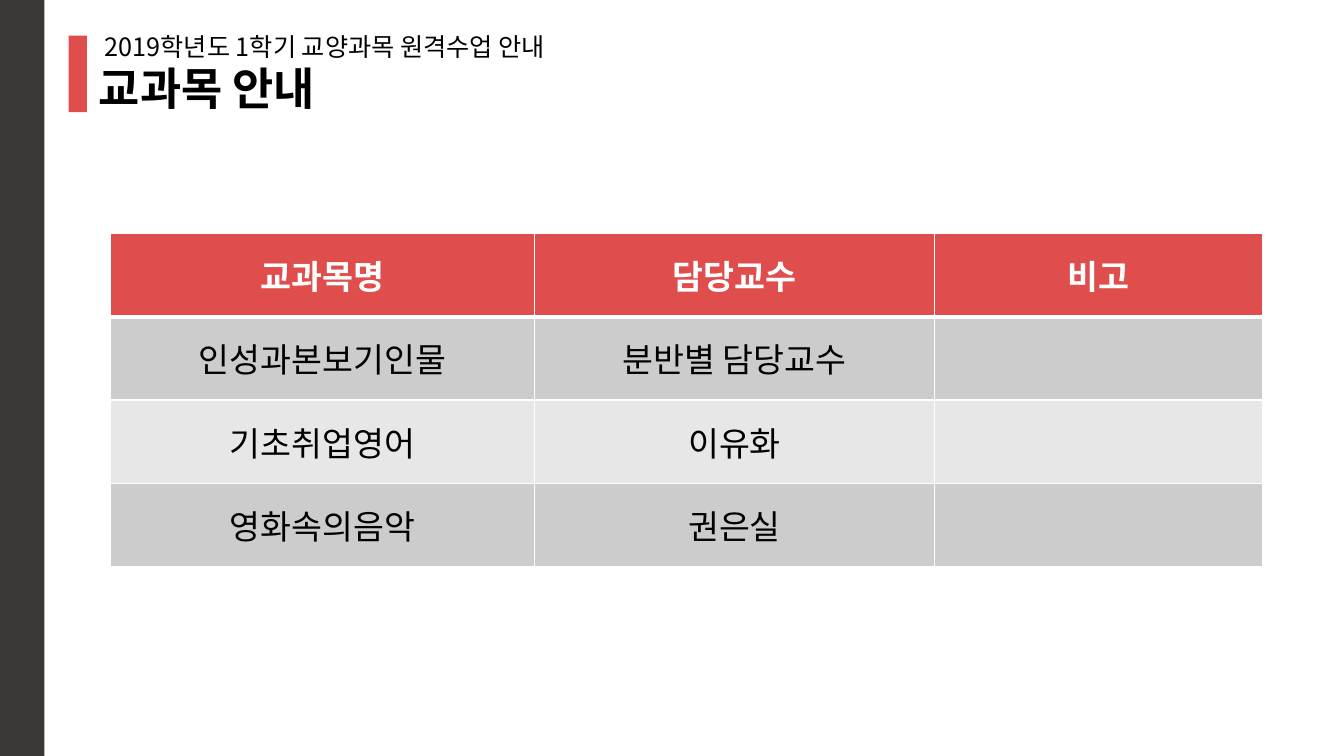
import lxml.etree
import pptx
import pptx.dml.color
import pptx.enum.shapes
import pptx.enum.text
import pptx.oxml.ns
import pptx.util

Cm = pptx.util.Cm
Pt = pptx.util.Pt
TEXT = pptx.enum.text
qn = pptx.oxml.ns.qn

FONT = "Noto Sans CJK KR"
HUES = {
    "red": "DF4D4D",
    "dark": "3B3838",
    "black": "000000",
    "white": "FFFFFF",
    "gray": "CCCCCC",
    "pale": "E7E7E7",
}
ROWS = [
    ["교과목명", "담당교수", "비고"],
    ["인성과본보기인물", "분반별 담당교수", ""],
    ["기초취업영어", "이유화", ""],
    ["영화속의음악", "권은실", ""],
]
WIDTHS = [10.69, 10.08, 8.28]
HIGH = 2.1


def color(name):
    return pptx.dml.color.RGBColor.from_string(HUES[name])


def apply(item, form):
    for key, value in form.items():
        setattr(item, key, value)


def place(item, left, top, width, height):
    apply(item, {"left": Cm(left), "top": Cm(top),
                 "width": Cm(width), "height": Cm(height)})


def write(frame, text, size, hue="black", bold=False, align=TEXT.PP_ALIGN.LEFT):
    para = frame.paragraphs[0]
    para.alignment = align
    run = para.add_run()
    run.text = text
    apply(run.font, {"name": FONT, "size": Pt(size), "bold": bold})
    run.font.color.rgb = color(hue)
    # Hangul takes its face from the East Asian font
    east = lxml.etree.SubElement(run.font._element, qn("a:ea"))
    east.set("typeface", FONT)


def fit(frame):
    apply(frame, {"word_wrap": False, "auto_size": TEXT.MSO_AUTO_SIZE.NONE,
                  "vertical_anchor": TEXT.MSO_ANCHOR.TOP})


def add_bar(slide, hue, *box):
    kind = pptx.enum.shapes.MSO_SHAPE.RECTANGLE
    bar = slide.shapes.add_shape(kind, *map(Cm, box))
    bar.shadow.inherit = False
    bar.fill.solid()
    bar.fill.fore_color.rgb = color(hue)
    bar.line.fill.background()


def add_label(slide, text, size, *box):
    label = slide.shapes.add_textbox(*map(Cm, box))
    fit(label.text_frame)
    write(label.text_frame, text, size)


def set_title(slide, text, size, *box):
    title = slide.shapes.title
    place(title, *box)
    fit(title.text_frame)
    write(title.text_frame, text, size, bold=True)


def add_edges(cell, sides):
    props = cell._tc.get_or_add_tcPr()
    for side, width in sides.items():
        edge = lxml.etree.SubElement(props, qn("a:ln" + side), w=str(Pt(width)))
        fill = lxml.etree.SubElement(edge, qn("a:solidFill"))
        lxml.etree.SubElement(fill, qn("a:srgbClr"), val=HUES["white"])


def add_grid(slide, left, top):
    count = len(ROWS)
    table = slide.shapes.add_table(
        count, len(WIDTHS), Cm(left), Cm(top), Cm(sum(WIDTHS)), Cm(HIGH * count)
    ).table
    for column, width in zip(table.columns, WIDTHS):
        column.width = Cm(width)
    for i, texts in enumerate(ROWS):
        table.rows[i].height = Cm(HIGH)
        head = i == 0
        back = "red" if head else ("gray" if i % 2 else "pale")
        for j, text in enumerate(texts):
            cell = table.cell(i, j)
            # A thick rule parts the header from the body
            add_edges(cell, {"L": 1, "R": 1, "T": 3 if i == 1 else 1,
                             "B": 3 if head else 1})
            cell.fill.solid()
            cell.fill.fore_color.rgb = color(back)
            cell.vertical_anchor = TEXT.MSO_ANCHOR.MIDDLE
            if text:
                write(cell.text_frame, text, 24, "white" if head else "black",
                      head, TEXT.PP_ALIGN.CENTER)


def main():
    deck = pptx.Presentation()
    apply(deck, {"slide_width": Cm(33.87), "slide_height": Cm(19.05)})
    slide = deck.slides.add_slide(deck.slide_layouts[5])

    # Course table
    add_grid(slide, 2.78, 5.88)

    # Side band
    add_bar(slide, "dark", 0, 0, 1.12, 19.05)

    # Heading
    add_label(slide, "2019학년도 1학기 교양과목 원격수업 안내", 18,
              2.39, 0.66, 12.8, 1.02)
    set_title(slide, "교과목 안내", 32, 2.24, 1.4, 6.6, 3)
    add_bar(slide, "red", 1.73, 0.9, 0.46, 1.93)

    deck.save("out.pptx")


if __name__ == "__main__":
    main()
